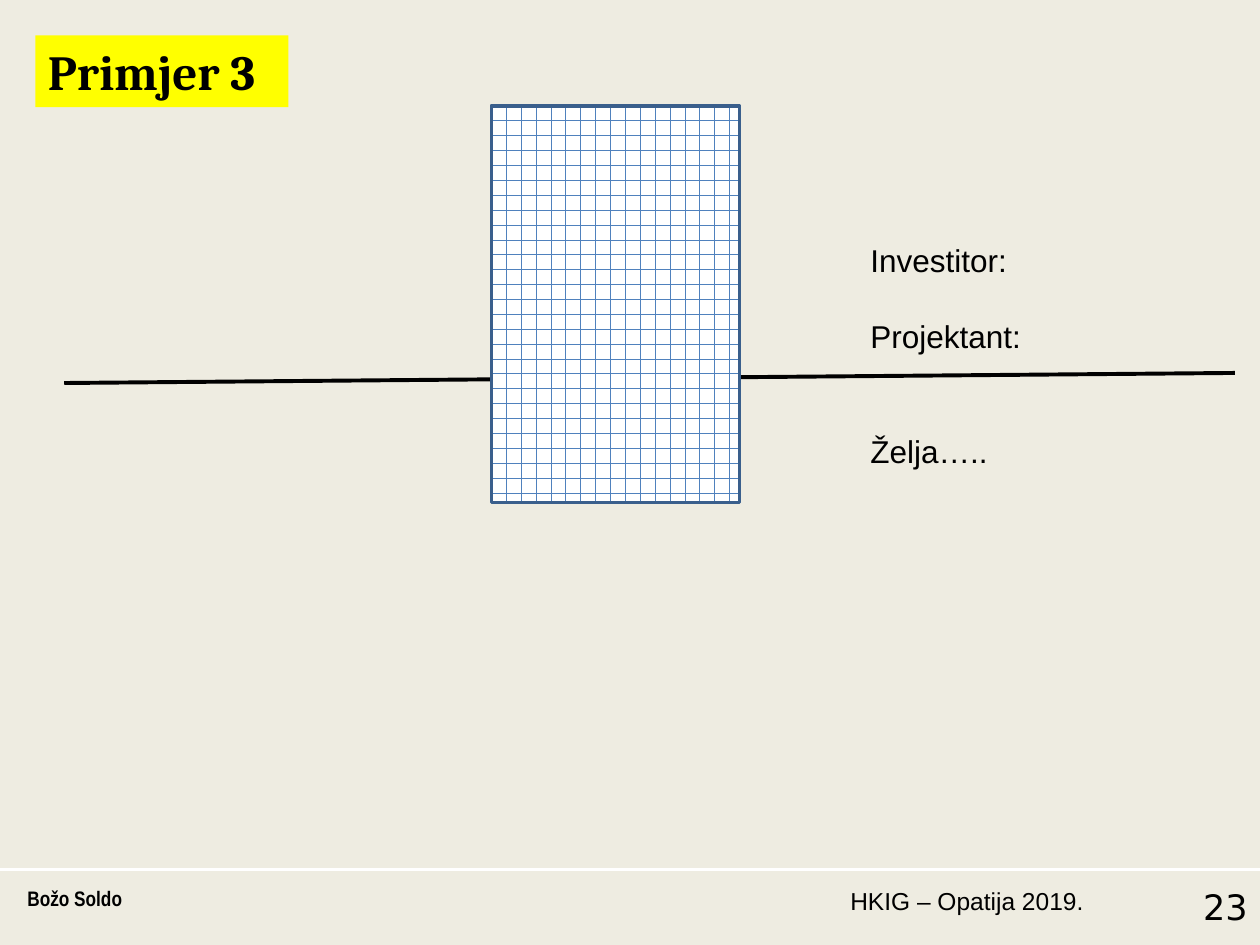
from lxml import etree
from pptx import Presentation
from pptx.dml.color import RGBColor
from pptx.enum.dml import MSO_PATTERN
from pptx.enum.shapes import MSO_CONNECTOR, MSO_SHAPE
from pptx.enum.text import MSO_ANCHOR, MSO_AUTO_SIZE, PP_ALIGN
from pptx.oxml.ns import qn
from pptx.util import Inches, Pt

BRICK = MSO_PATTERN.HORIZONTAL_BRICK
STRAIGHT = MSO_CONNECTOR.STRAIGHT
RECTANGLE = MSO_SHAPE.RECTANGLE
TOP = MSO_ANCHOR.TOP
LEFT, RIGHT, JUSTIFY = PP_ALIGN.LEFT, PP_ALIGN.RIGHT, PP_ALIGN.JUSTIFY

BEIGE = RGBColor(0xEE, 0xEC, 0xE1)
WHITE = RGBColor(0xFF, 0xFF, 0xFF)
BLACK = RGBColor(0x00, 0x00, 0x00)
YELLOW = RGBColor(0xFF, 0xFF, 0x00)
BLUE = RGBColor(0x4F, 0x81, 0xBD)
DARK_BLUE = RGBColor(0x3A, 0x5F, 0x8C)

TITLE_ONLY = 5
FOOTER_TOP, FOOTER_HEIGHT = 6.98, 0.52


def style_paragraph(para, font_name, size, bold=False, align=LEFT):
    para.alignment = align
    para.font.name = font_name
    para.font.size = Pt(size)
    para.font.bold = bold
    para.font.color.rgb = BLACK


def add_title(page, text):
    title = page.shapes.title
    title.left, title.top = Inches(0.28), Inches(0.28)
    title.width, title.height = Inches(2.01), Inches(0.57)
    title.fill.solid()
    title.fill.fore_color.rgb = YELLOW
    frame = title.text_frame
    frame.text = text
    frame.auto_size = MSO_AUTO_SIZE.NONE
    frame.vertical_anchor = TOP
    style_paragraph(frame.paragraphs[0], "Cambria", 28, True, JUSTIFY)


def add_text(page, left, top, width, height, lines, font_name, size,
             bold=False, align=LEFT):
    """Each line is a pair: its text and the space before it in points."""
    box = page.shapes.add_textbox(
        Inches(left), Inches(top), Inches(width), Inches(height))
    frame = box.text_frame
    frame.word_wrap = True
    frame.vertical_anchor = TOP
    for index, (text, gap) in enumerate(lines):
        para = frame.add_paragraph() if index else frame.paragraphs[0]
        para.text = text
        if gap:
            para.space_before = Pt(gap)
        style_paragraph(para, font_name, size, bold, align)


def add_footer(page, left, width, text, font_name, size, bold=False,
               align=LEFT):
    add_text(page, left, FOOTER_TOP, width, FOOTER_HEIGHT, [(text, 0)],
             font_name, size, bold, align)


def add_line(page, start, end, color, weight):
    line = page.shapes.add_connector(
        STRAIGHT, *(Inches(value) for value in start + end))
    line.line.color.rgb = color
    line.line.width = Pt(weight)
    etree.SubElement(line._element.spPr, qn("a:effectLst"))


def add_building(page, left, top, width, height):
    building = page.shapes.add_shape(
        RECTANGLE, Inches(left), Inches(top), Inches(width), Inches(height))
    building.shadow.inherit = False
    building.fill.patterned()
    building.fill.pattern = BRICK
    building.fill.fore_color.rgb = BLUE
    building.fill.back_color.rgb = WHITE
    building.line.color.rgb = DARK_BLUE
    building.line.width = Pt(2)


def main():
    deck = Presentation()
    deck.slide_width, deck.slide_height = Inches(10), Inches(7.5)
    page = deck.slides.add_slide(deck.slide_layouts[TITLE_ONLY])
    page.background.fill.solid()
    page.background.fill.fore_color.rgb = BEIGE

    # Footer
    add_line(page, (0, 6.9), (10, 6.9), WHITE, 1.5)
    add_footer(page, 6.57, 2.13, "HKIG – Opatija 2019.", "Arial", 14,
               align=RIGHT)
    add_footer(page, 0.12, 6.54, "Božo Soldo", "Arial Narrow", 12, bold=True)
    add_footer(page, 8.78, 1.22, "23", "DejaVu Sans", 20, align=RIGHT)

    # Ground line with the building in front of it
    add_line(page, (0.51, 3.04), (9.8, 2.96), BLACK, 2.25)
    add_title(page, "Primjer 3")
    add_building(page, 3.9, 0.84, 1.97, 3.15)

    # Roles
    roles = [("Investitor:", 0), ("Projektant:", 22), ("Želja…..", 44)]
    add_text(page, 6.81, 1.86, 2.13, 1.92, roles, "Arial", 18)

    deck.save("out.pptx")


if __name__ == "__main__":
    main()
